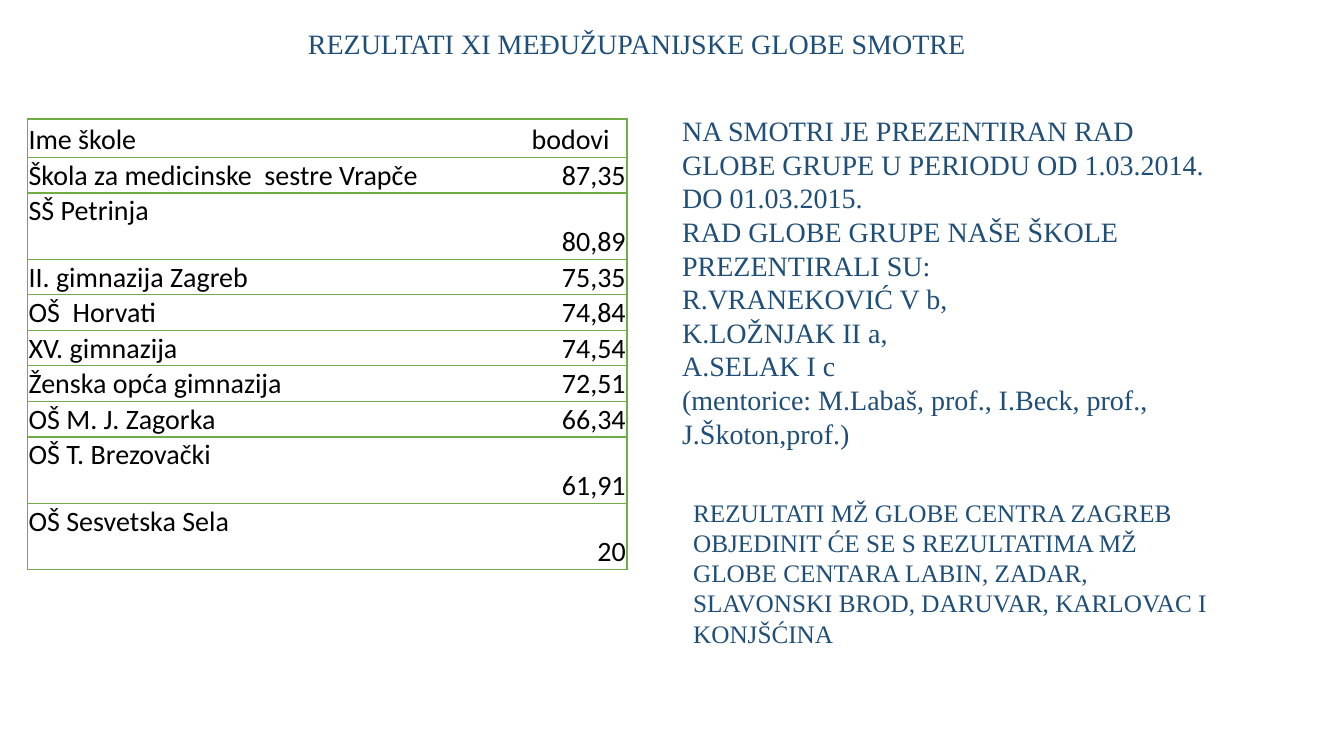
"""Build the slide with the results of the GLOBE meeting."""
from dataclasses import dataclass

from lxml import etree
from pptx import Presentation
from pptx.dml.color import RGBColor
from pptx.enum.text import MSO_ANCHOR, MSO_AUTO_SIZE, PP_ALIGN
from pptx.oxml.ns import qn
from pptx.util import Cm, Pt

LEFT, CENTER, RIGHT = PP_ALIGN.LEFT, PP_ALIGN.CENTER, PP_ALIGN.RIGHT
TOP, BOTTOM = MSO_ANCHOR.TOP, MSO_ANCHOR.BOTTOM
NO_AUTOFIT = MSO_AUTO_SIZE.NONE
TITLE_ONLY = 5


@dataclass(frozen=True)
class Theme:
    """Colours, fonts and type sizes of the slide."""
    blue: RGBColor = RGBColor(0x1F, 0x4E, 0x79)
    black: RGBColor = RGBColor(0, 0, 0)
    white: RGBColor = RGBColor(0xFF, 0xFF, 0xFF)
    border: str = "70AD47"
    border_width: int = Pt(1)
    text_font: str = "Times New Roman"
    table_font: str = "Calibri"
    size: int = Pt(20)
    small_size: int = Pt(18)


THEME = Theme()
TITLE = "REZULTATI XI MEĐUŽUPANIJSKE GLOBE SMOTRE"
PRESENTERS = [
    "NA SMOTRI JE PREZENTIRAN RAD GLOBE GRUPE U PERIODU OD 1.03.2014. DO 01.03.2015.",
    "RAD GLOBE GRUPE NAŠE ŠKOLE PREZENTIRALI SU:",
    "R.VRANEKOVIĆ V b,",
    "K.LOŽNJAK II a,",
    "A.SELAK I c",
    "(mentorice: M.Labaš, prof., I.Beck, prof., J.Škoton,prof.)",
]
CENTRES = [
    "REZULTATI MŽ GLOBE CENTRA ZAGREB OBJEDINIT ĆE SE S REZULTATIMA MŽ GLOBE "
    "CENTARA LABIN, ZADAR, SLAVONSKI BROD, DARUVAR, KARLOVAC I KONJŠĆINA",
]
HEADER_HEIGHT, ROW_HEIGHT, TALL_HEIGHT = Cm(0.97), Cm(0.89), Cm(1.67)
COLUMN_WIDTHS = (Cm(12.27), Cm(2.84))
SCORES = [
    ("Ime škole", "bodovi", HEADER_HEIGHT),
    ("Škola za medicinske  sestre Vrapče", "87,35", ROW_HEIGHT),
    ("SŠ Petrinja", "80,89", TALL_HEIGHT),
    ("II. gimnazija Zagreb", "75,35", ROW_HEIGHT),
    ("OŠ  Horvati", "74,84", ROW_HEIGHT),
    ("XV. gimnazija", "74,54", ROW_HEIGHT),
    ("Ženska opća gimnazija", "72,51", ROW_HEIGHT),
    ("OŠ M. J. Zagorka", "66,34", ROW_HEIGHT),
    ("OŠ T. Brezovački", "61,91", TALL_HEIGHT),
    ("OŠ Sesvetska Sela", "20", TALL_HEIGHT),
]


def write_text(text_frame, lines, *, font=THEME.text_font, size=THEME.size,
               color=THEME.blue, align=LEFT):
    """Write each line as a formatted paragraph."""
    for index, line in enumerate(lines):
        paragraph = text_frame.add_paragraph() if index else text_frame.paragraphs[0]
        paragraph.alignment = align
        run = paragraph.add_run()
        run.text = line
        run.font.name = font
        run.font.size = size
        run.font.color.rgb = color


def set_title(slide, text):
    """Place and format the title placeholder."""
    title = slide.shapes.title
    title.left, title.top, title.width, title.height = Cm(1.52), Cm(0.53), Cm(29.06), Cm(1.12)
    title.text_frame.auto_size = NO_AUTOFIT
    title.text_frame.vertical_anchor = TOP
    write_text(title.text_frame, [text], align=CENTER)


def add_text(slide, lines, left, top, width, height, **text_format):
    """Add a wrapping text box."""
    text_frame = slide.shapes.add_textbox(left, top, width, height).text_frame
    text_frame.word_wrap = True
    write_text(text_frame, lines, **text_format)


def set_borders(cell, visible_sides):
    """Draw the named sides of a cell and hide the others."""
    properties = cell._tc.get_or_add_tcPr()
    for side in "LRTB":
        line = etree.SubElement(properties, qn(f"a:ln{side}"), w=str(THEME.border_width))
        if side in visible_sides:
            fill = etree.SubElement(line, qn("a:solidFill"))
            etree.SubElement(fill, qn("a:srgbClr"), val=THEME.border)
        else:
            etree.SubElement(line, qn("a:noFill"))


def fill_cell(cell, text, sides, align, anchor):
    """Write and format one cell of the score table."""
    set_borders(cell, sides)
    cell.fill.solid()
    cell.fill.fore_color.rgb = THEME.white
    cell.margin_left = cell.margin_right = cell.margin_top = Cm(0.03)
    cell.margin_bottom = 0
    cell.vertical_anchor = anchor
    write_text(cell.text_frame, [text], font=THEME.table_font, color=THEME.black, align=align)


def add_scores(slide, scores, left, top):
    """Add the table of schools and their points."""
    height = sum(row_height for _, _, row_height in scores)
    table = slide.shapes.add_table(len(scores), len(COLUMN_WIDTHS), left, top,
                                   sum(COLUMN_WIDTHS), height).table
    table.first_row = table.horz_banding = False
    for column, width in zip(table.columns, COLUMN_WIDTHS):
        column.width = width
    for index, (school, points, row_height) in enumerate(scores):
        table.rows[index].height = row_height
        fill_cell(table.cell(index, 0), school, "LTB", LEFT,
                  TOP if row_height == TALL_HEIGHT else BOTTOM)
        fill_cell(table.cell(index, 1), points, "RTB", RIGHT if index else CENTER, BOTTOM)


def main():
    """Create the presentation and save it."""
    presentation = Presentation()
    presentation.slide_width, presentation.slide_height = Cm(33.87), Cm(19.05)
    slide = presentation.slides.add_slide(presentation.slide_layouts[TITLE_ONLY])
    set_title(slide, TITLE)
    add_scores(slide, SCORES, Cm(0.69), Cm(3))
    add_text(slide, CENTRES, Cm(17.22), Cm(12.4), Cm(13.74), Cm(4.08), size=THEME.small_size)
    add_text(slide, PRESENTERS, Cm(16.94), Cm(2.74), Cm(14.27), Cm(8.81))
    presentation.save("out.pptx")


if __name__ == "__main__":
    main()
